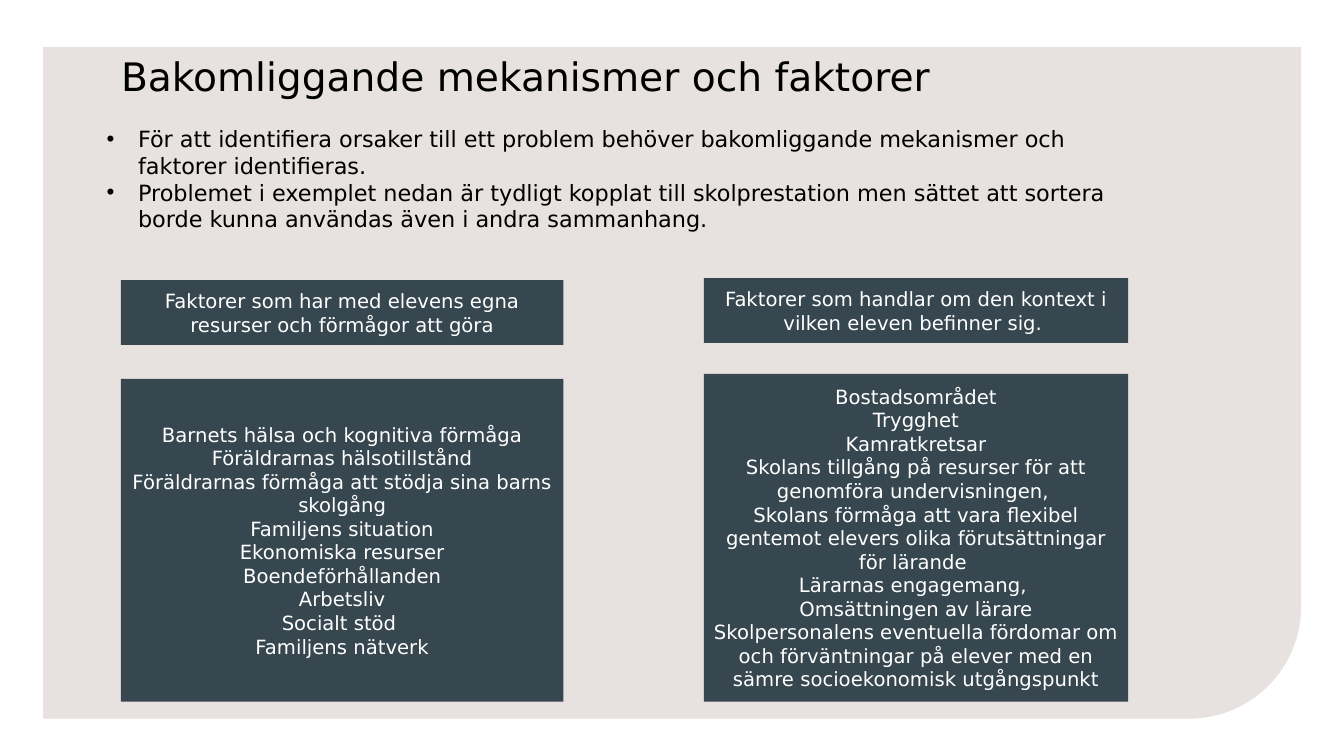
from dataclasses import dataclass

from pptx import Presentation
from pptx import util as u
from pptx.dml.color import RGBColor
from pptx.enum import shapes, text
from pptx.oxml.ns import qn
from lxml import etree

TITLE = "Bakomliggande mekanismer och faktorer"
INTRO = [
    "För att identifiera orsaker till ett problem behöver bakomliggande "
    "mekanismer och faktorer identifieras.",
    "Problemet i exemplet nedan är tydligt kopplat till skolprestation men "
    "sättet att sortera borde kunna användas även i andra sammanhang.",
]
# Each column: left, width, then (top, height, lines) for head and body, in cm
COLUMNS = [
    (3.05, 11.15, [
        (7.06, 1.63, ["Faktorer som har med elevens egna resurser och förmågor att göra"]),
        (9.55, 8.13, [
            "Barnets hälsa och kognitiva förmåga",
            "Föräldrarnas hälsotillstånd",
            "Föräldrarnas förmåga att stödja sina barns skolgång",
            "Familjens situation",
            "Ekonomiska resurser",
            "Boendeförhållanden",
            "Arbetsliv",
            "Socialt stöd ",
            "Familjens nätverk",
        ]),
    ]),
    (17.74, 10.69, [
        (7.01, 1.63, ["Faktorer som handlar om den kontext i vilken eleven befinner sig. "]),
        (9.42, 8.26, [
            "Bostadsområdet",
            "Trygghet",
            "Kamratkretsar",
            "Skolans tillgång på resurser för att genomföra undervisningen, ",
            "Skolans förmåga att vara flexibel gentemot elevers olika förutsättningar för lärande ",
            "Lärarnas engagemang, ",
            "Omsättningen av lärare",
            "Skolpersonalens eventuella fördomar om och förväntningar på elever "
            "med en sämre socioekonomisk utgångspunkt",
        ]),
    ]),
]


@dataclass(frozen=True)
class Theme:
    font: str = "DejaVu Sans"
    ink: str = "000000"
    pale: str = "FFFFFF"
    panel: str = "E7E1DF"
    box: str = "37474F"
    head: int = 28
    body: int = 16
    label: int = 14


THEME = Theme()


def place(shape, left, top, width, height):
    shape.left, shape.top = u.Cm(left), u.Cm(top)
    shape.width, shape.height = u.Cm(width), u.Cm(height)


def write(frame, lines, size, color, align):
    frame.word_wrap = True
    frame.text = "\n".join(lines)
    for para in frame.paragraphs:
        para.alignment = align
        for run in para.runs:
            run.font.name = THEME.font
            run.font.size = u.Pt(size)
            run.font.color.rgb = RGBColor.from_string(color)


def trim(frame):
    """Remove the margins and hang the text from the top."""
    frame.margin_left = frame.margin_right = 0
    frame.margin_top = frame.margin_bottom = 0
    frame.vertical_anchor = text.MSO_ANCHOR.TOP
    frame.auto_size = text.MSO_AUTO_SIZE.NONE


def block(slide, kind, color, *area):
    shape = slide.shapes.add_shape(kind, *map(u.Cm, area))
    shape.shadow.inherit = False
    shape.fill.solid()
    shape.fill.fore_color.rgb = RGBColor.from_string(color)
    shape.line.fill.background()
    return shape


def add_panel(slide):
    """Add the backdrop, rounded at lower right, behind everything else."""
    panel = block(slide, shapes.MSO_SHAPE.ROUND_1_RECTANGLE, THEME.panel,
                  1.09, 1.19, 31.7, 16.92)
    node = panel.element
    node.spPr.find(qn("a:xfrm")).set("flipV", "1")
    slide.shapes.element.insert(2, node)


def add_title(slide):
    title = slide.shapes.title
    place(title, 3.05, 1.19, 27.91, 2.92)
    trim(title.text_frame)
    write(title.text_frame, [TITLE], THEME.head, THEME.ink, text.PP_ALIGN.LEFT)
    title.text_frame.paragraphs[0].line_spacing = 1.1


def add_intro(slide):
    box = slide.shapes.add_textbox(*map(u.Cm, (2.69, 3.15, 26.44, 2.74)))
    frame = box.text_frame
    trim(frame)
    write(frame, INTRO, THEME.body, THEME.ink, text.PP_ALIGN.LEFT)
    for para in frame.paragraphs:
        props = para._p.get_or_add_pPr()
        props.set("marL", str(u.Cm(0.79)))
        props.set("indent", str(-u.Cm(0.79)))
        etree.SubElement(props, qn("a:buFont")).set("typeface", "Arial")
        etree.SubElement(props, qn("a:buChar")).set("char", "•")


def add_boxes(slide):
    for left, width, parts in COLUMNS:
        for top, height, lines in parts:
            box = block(slide, shapes.MSO_SHAPE.RECTANGLE, THEME.box,
                        left, top, width, height)
            box.text_frame.vertical_anchor = text.MSO_ANCHOR.MIDDLE
            write(box.text_frame, lines, THEME.label, THEME.pale,
                  text.PP_ALIGN.CENTER)


def main():
    deck = Presentation()
    deck.slide_width, deck.slide_height = u.Cm(33.87), u.Cm(19.05)
    slide = deck.slides.add_slide(deck.slide_layouts[5])
    add_panel(slide)
    add_title(slide)
    add_intro(slide)
    add_boxes(slide)
    deck.save("out.pptx")


if __name__ == "__main__":
    main()
